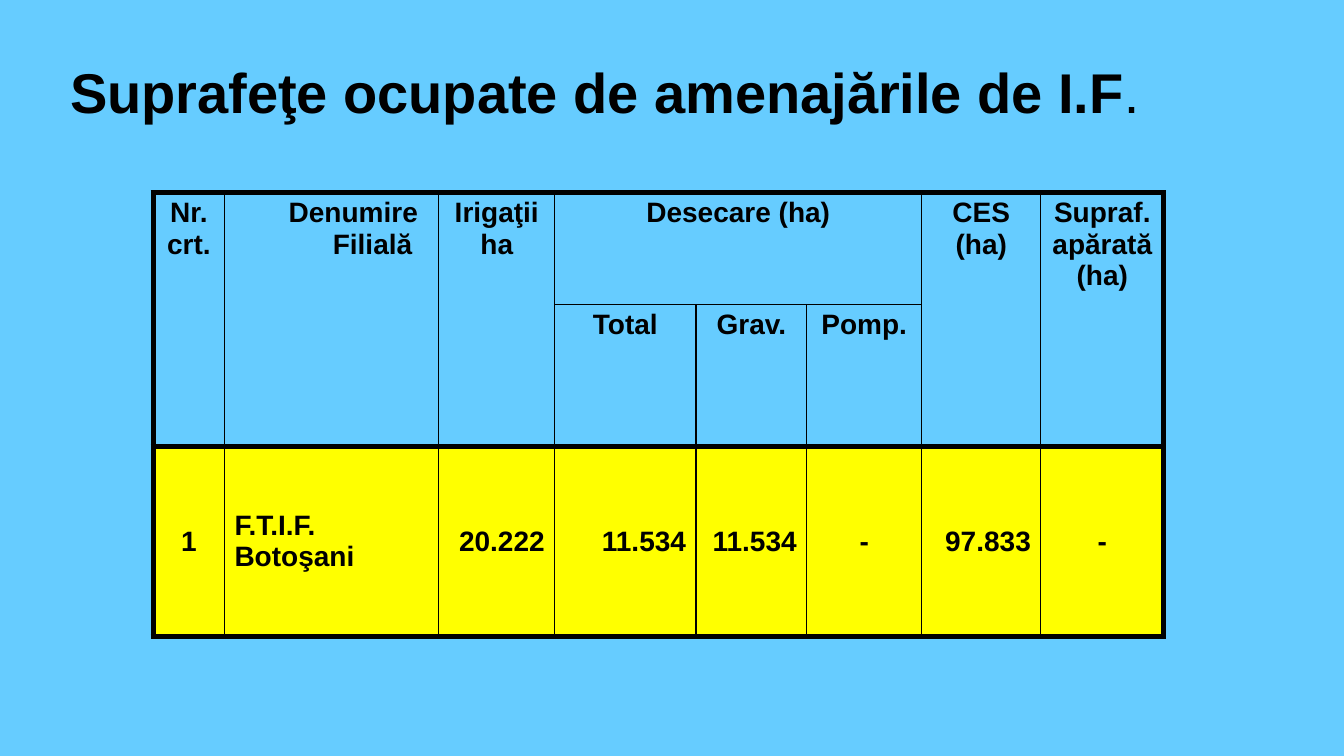
from lxml.etree import SubElement
from pptx import Presentation
from pptx.dml.color import RGBColor
from pptx.enum.text import MSO_ANCHOR, PP_ALIGN
from pptx.oxml.ns import qn
from pptx.util import Cm, Pt

COLORS = {"background": "66CCFF", "text": "000000", "border": "000000", "data": "FFFF00"}
THIN, THICK = Pt(1), Pt(4)
LEFT, CENTER, RIGHT = PP_ALIGN.LEFT, PP_ALIGN.CENTER, PP_ALIGN.RIGHT


def add_text(paragraph, text, size, bold=True):
    run = paragraph.add_run()
    run.text = text
    run.font.name = "Arial"
    run.font.size = Pt(size)
    run.font.bold = bold
    run.font.color.rgb = RGBColor.from_string(COLORS["text"])


def set_borders(cell, widths):
    """Draw the cell edges; widths run left, right, top, bottom."""
    properties = cell._tc.get_or_add_tcPr()
    for edge, width in zip(("a:lnL", "a:lnR", "a:lnT", "a:lnB"), widths):
        line = SubElement(properties, qn(edge), w=str(width))
        fill = SubElement(line, qn("a:solidFill"))
        SubElement(fill, qn("a:srgbClr"), val=COLORS["border"])


presentation = Presentation()
presentation.slide_width = Cm(33.87)
presentation.slide_height = Cm(19.05)
slide = presentation.slides.add_slide(presentation.slide_layouts[5])
slide.background.fill.solid()
slide.background.fill.fore_color.rgb = RGBColor.from_string(COLORS["background"])

# Title
title = slide.shapes.title
title.left, title.top, title.width, title.height = Cm(0), Cm(0.71), Cm(30.48), Cm(3.18)
title.text_frame.vertical_anchor = MSO_ANCHOR.MIDDLE
title_paragraph = title.text_frame.paragraphs[0]
title_paragraph.alignment = CENTER
add_text(title_paragraph, "Suprafeţe ocupate de amenajările de I.F", 40)
add_text(title_paragraph, ".", 40, bold=False)

# Table grid
column_widths = [1.8, 5.4, 2.92, 3.56, 2.79, 2.9, 3, 3.1]
row_heights = [2.82, 3.58, 4.78]
last_column, last_row = len(column_widths) - 1, len(row_heights) - 1
table = slide.shapes.add_table(
    len(row_heights), len(column_widths), Cm(3.86), Cm(4.85),
    Cm(sum(column_widths)), Cm(sum(row_heights))).table
table.first_row = False
table.horz_banding = False
for column, width in zip(table.columns, column_widths):
    column.width = Cm(width)
for row, height in zip(table.rows, row_heights):
    row.height = Cm(height)

for column in (0, 1, 2, 6, 7):
    table.cell(0, column).merge(table.cell(1, column))
table.cell(0, 3).merge(table.cell(0, 5))

# Borders and fills: thick frame and thick rule between header and data
for row in range(last_row + 1):
    for column in range(last_column + 1):
        cell = table.cell(row, column)
        bottom_row = row + cell.span_height - 1 if cell.is_merge_origin else row
        set_borders(cell, (
            THICK if column == 0 else THIN,
            THICK if column == last_column else THIN,
            THICK if row in (0, last_row) else THIN,
            THICK if bottom_row >= last_row - 1 else THIN))
        if row == last_row:
            cell.fill.solid()
            cell.fill.fore_color.rgb = RGBColor.from_string(COLORS["data"])
            cell.vertical_anchor = MSO_ANCHOR.MIDDLE
        else:
            cell.fill.background()

# Cell texts: row, column, alignment, lines
cell_texts = [
    (0, 0, CENTER, ["Nr.", "crt."]),
    (0, 1, CENTER, ["Denumire Filială"]),
    (0, 2, CENTER, ["Irigaţii", "ha"]),
    (0, 3, CENTER, ["Desecare (ha)"]),
    (0, 6, CENTER, ["CES", "(ha)"]),
    (0, 7, CENTER, ["Supraf.", "apărată", "(ha)"]),
    (1, 3, CENTER, ["Total"]),
    (1, 4, CENTER, ["Grav."]),
    (1, 5, CENTER, ["Pomp."]),
    (2, 0, CENTER, ["1"]),
    (2, 1, LEFT, ["F.T.I.F.", "Botoşani"]),
    (2, 2, RIGHT, ["20.222"]),
    (2, 3, RIGHT, ["11.534"]),
    (2, 4, RIGHT, ["11.534"]),
    (2, 5, CENTER, ["-"]),
    (2, 6, RIGHT, ["97.833"]),
    (2, 7, CENTER, ["-"]),
]
for row, column, alignment, lines in cell_texts:
    cell = table.cell(row, column)
    cell.margin_left = cell.margin_right = Cm(0.25)
    cell.margin_top = cell.margin_bottom = Cm(0.13)
    text_frame = cell.text_frame
    for number, line in enumerate(lines):
        paragraph = text_frame.add_paragraph() if number else text_frame.paragraphs[0]
        paragraph.alignment = alignment
        second_level = (row, column) == (0, 1)
        paragraph.level = 1 if second_level else 0
        indents = paragraph._p.get_or_add_pPr()
        indents.set("marL", str(Cm(2.06 if second_level else 0.97)))
        indents.set("indent", str(Cm(-0.97)))
        add_text(paragraph, line, 20)

presentation.save("out.pptx")
